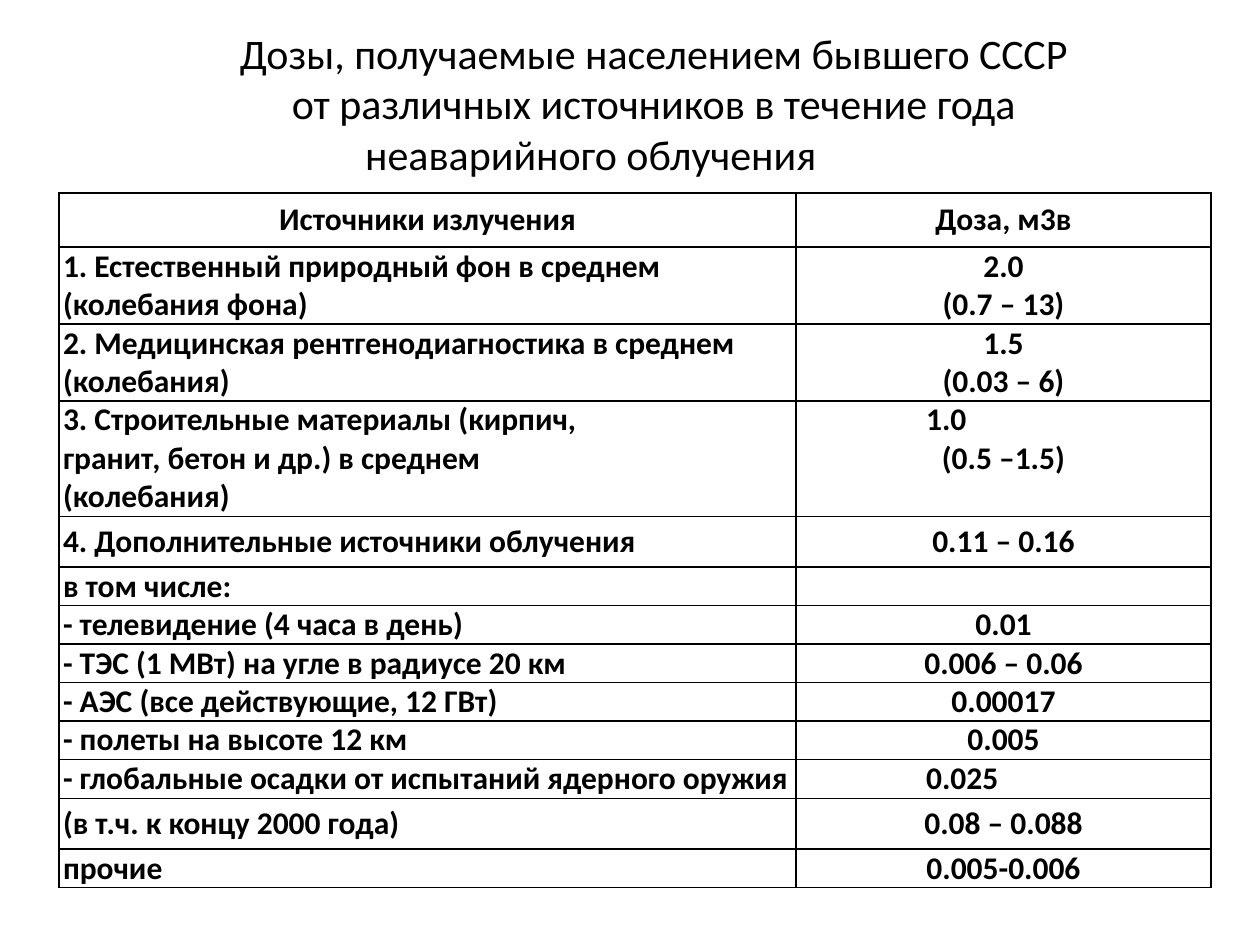
from lxml.etree import SubElement
from pptx import Presentation
from pptx.dml.color import RGBColor
from pptx.enum.text import MSO_ANCHOR as Anchor, MSO_AUTO_SIZE as Auto, PP_ALIGN as Align
from pptx.oxml.ns import qn
from pptx.util import Cm, Pt

INK = "000000"
LEFT = Cm(1.19)


def write(para, text, size, bold=False, align=Align.LEFT, indent=0):
    para.alignment = align
    if indent:
        props = para._p.get_or_add_pPr()
        props.set("marL", "0")
        props.set("indent", str(Cm(indent)))
    run = para.add_run()
    run.text = text
    font = run.font
    font.name, font.size, font.bold = "Calibri", Pt(size), bold
    font.color.rgb = RGBColor.from_string(INK)


def border(cell, side, shown):
    line = SubElement(cell._tc.get_or_add_tcPr(), qn("a:ln" + side), w=str(Pt(1)))
    if shown:
        fill = SubElement(line, qn("a:solidFill"))
        SubElement(fill, qn("a:srgbClr"), val=INK)
    else:
        SubElement(line, qn("a:noFill"))


deck = Presentation()
deck.slide_width, deck.slide_height = Cm(25.4), Cm(19.05)
slide = deck.slides.add_slide(deck.slide_layouts[6])

# Dose table: row height, source lines, dose lines
rows = [
    (1.09, ["Источники излучения"], ["Доза, м3в"]),
    (1.12, ["1. Естественный природный фон в среднем", "(колебания фона)"],
     ["2.0", "(0.7 – 13)"]),
    (0.64, ["2. Медицинская рентгенодиагностика в среднем"], ["1.5"]),
    (0.53, ["(колебания)"], ["(0.03 – 6)"]),
    (1.55, ["3. Строительные материалы (кирпич,", "гранит, бетон и др.) в среднем",
            "(колебания)"], ["1.0", "(0.5 –1.5)"]),
    (1.02, ["4. Дополнительные источники облучения"], ["0.11 – 0.16"]),
    (0.56, ["в том числе:"], []),
    (0.64, ["- телевидение (4 часа в день)"], ["0.01"]),
    (0.66, ["- ТЭС (1 МВт) на угле в радиусе 20 км"], ["0.006 – 0.06"]),
    (0.58, ["- АЭС (все действующие, 12 ГВт)"], ["0.00017"]),
    (0.64, ["- полеты на высоте 12 км"], ["0.005"]),
    (0.79, ["- глобальные осадки от испытаний ядерного оружия"], ["0.025"]),
    (1.02, ["(в т.ч. к концу 2000 года)"], ["0.08 – 0.088"]),
    (0.51, ["прочие"], ["0.005-0.006"]),
]
inset = {"1.0", "0.025"}  # doses set by indent, not centred
joined = 2  # this row has no rule between it and the next
tops = {(4, 0), (4, 1), (11, 1)}  # cells with text at the top

high = Cm(sum(row[0] for row in rows))
table = slide.shapes.add_table(len(rows), 2, LEFT, Cm(3.89), Cm(23.22), high).table
table.first_row = table.horz_banding = False
for col, width in zip(table.columns, (14.86, 8.36)):
    col.width = Cm(width)

for r, (height, *texts) in enumerate(rows):
    table.rows[r].height = Cm(height)
    for c, lines in enumerate(texts):
        cell = table.cell(r, c)
        cell.margin_left = cell.margin_right = Cm(0.08)
        cell.margin_top = cell.margin_bottom = 0
        cell.vertical_anchor = Anchor.TOP if (r, c) in tops else Anchor.MIDDLE
        for side in "LRTB":
            hidden = (r, side) in ((joined, "B"), (joined + 1, "T"))
            border(cell, side, not hidden)
        cell.fill.background()
        frame = cell.text_frame
        for i, text in enumerate(lines):
            para = frame.paragraphs[0] if i == 0 else frame.add_paragraph()
            mid = (r == 0 or c == 1) and text not in inset
            write(para, text, 18, True, Align.CENTER if mid else Align.LEFT,
                  2.54 if text in inset else 0)

# Title
box = slide.shapes.add_textbox(LEFT, Cm(0.41), Cm(21.44), Cm(3.33))
frame = box.text_frame
frame.word_wrap = True
frame.auto_size = Auto.SHAPE_TO_FIT_TEXT
frame.vertical_anchor = Anchor.MIDDLE
title = ["Дозы, получаемые населением бывшего СССР",
         "от различных источников в течение года неаварийного облучения"]
for i, text in enumerate(title):
    para = frame.paragraphs[0] if i == 0 else frame.add_paragraph()
    write(para, text, 24, align=Align.CENTER, indent=2.54)

deck.save("out.pptx")
